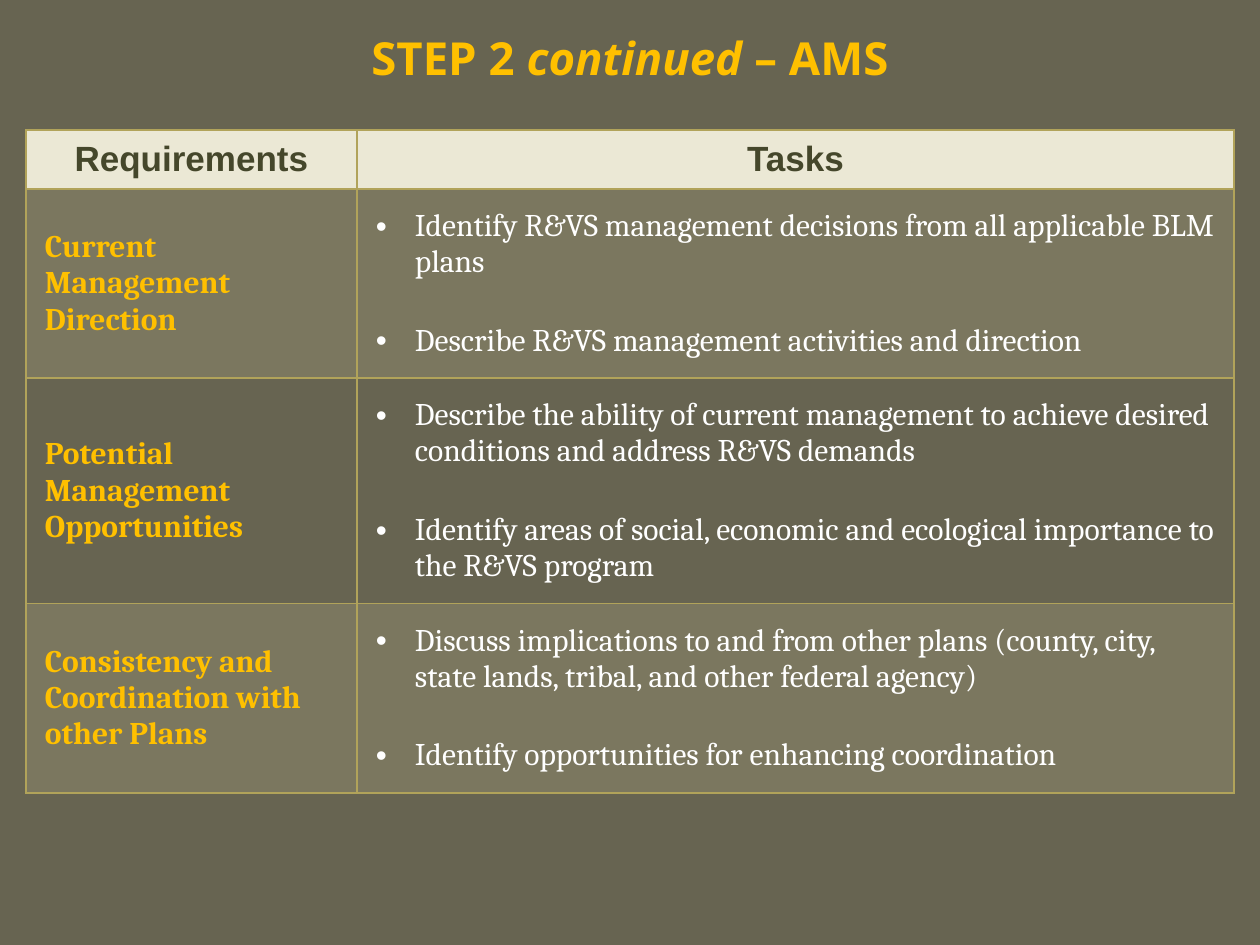
from dataclasses import dataclass

from lxml.etree import SubElement
from pptx import Presentation
from pptx.dml.color import RGBColor
from pptx.enum.text import MSO_ANCHOR, PP_ALIGN
from pptx.oxml import parse_xml
from pptx.oxml.ns import nsdecls, qn
from pptx.util import Pt

EMU_PER_PIXEL = 914400 / 126


@dataclass(frozen=True)
class Theme:
    background: str = "676451"
    accent: str = "FFC000"
    header_fill: str = "EBE8D5"
    header_text: str = "45472B"
    band: str = "CEC597"
    band_opacity: int = 20
    border: str = "B1A35A"
    body_text: str = "FFFFFF"
    title_font: str = "Open Sans"
    header_font: str = "Arial"
    body_font: str = "Cambria"
    title_size: int = 26
    header_size: int = 20
    body_size: int = 18


HEADINGS = ["Requirements", "Tasks"]
REQUIREMENTS = [
    ("Current Management Direction", [
        "Identify R&VS management decisions from all applicable BLM plans",
        "Describe R&VS management activities and direction",
    ]),
    ("Potential Management Opportunities", [
        "Describe the ability of current management to achieve desired "
        "conditions and address R&VS demands",
        "Identify areas of social, economic and ecological importance to "
        "the R&VS program",
    ]),
    ("Consistency and Coordination with other Plans", [
        "Discuss implications to and from other plans (county, city, "
        "state lands, tribal, and other federal agency)",
        "Identify opportunities for enhancing coordination",
    ]),
]
COLUMN_WIDTHS = [331, 877]
ROW_HEIGHTS = [59, 189, 225, 189]


def px(pixels):
    return round(pixels * EMU_PER_PIXEL)


def add_run(paragraph, text, *, font, size, color, bold=False, italic=False):
    run = paragraph.add_run()
    run.text = text
    run.font.name = font
    run.font.size = Pt(size)
    run.font.color.rgb = RGBColor.from_string(color)
    run.font.bold = bold
    run.font.italic = italic


def add_bullet(paragraph, indent):
    properties = paragraph._p.get_or_add_pPr()
    properties.set("marL", str(px(indent)))
    properties.set("indent", str(-px(indent)))
    SubElement(properties, qn("a:buFont")).set("typeface", "Arial")
    SubElement(properties, qn("a:buChar")).set("char", "•")


class SlideBuilder:
    def __init__(self, presentation, theme):
        self.theme = theme
        self.slide = presentation.slides.add_slide(presentation.slide_layouts[5])
        fill = self.slide.background.fill
        fill.solid()
        fill.fore_color.rgb = RGBColor.from_string(theme.background)

    def title(self, parts, left, top, width, height):
        """Fill the title from (text, italic) pairs."""
        title = self.slide.shapes.title
        title.left, title.top = px(left), px(top)
        title.width, title.height = px(width), px(height)
        title.text_frame.vertical_anchor = MSO_ANCHOR.MIDDLE
        paragraph = title.text_frame.paragraphs[0]
        paragraph.alignment = PP_ALIGN.CENTER
        for text, italic in parts:
            add_run(paragraph, text, font=self.theme.title_font,
                    size=self.theme.title_size, color=self.theme.accent,
                    bold=True, italic=italic)

    def table(self, left, top, column_widths, row_heights):
        table = self.slide.shapes.add_table(
            len(row_heights), len(column_widths), px(left), px(top),
            px(sum(column_widths)), px(sum(row_heights))).table
        for column, width in zip(table.columns, column_widths):
            column.width = px(width)
        for row, height in zip(table.rows, row_heights):
            row.height = px(height)
        for cell in table.iter_cells():
            cell.vertical_anchor = MSO_ANCHOR.MIDDLE
            self.borders(cell)
        return table

    def borders(self, cell):
        properties = cell._tc.get_or_add_tcPr()
        for position, side in enumerate(("lnL", "lnR", "lnT", "lnB")):
            properties.insert(position, parse_xml(
                f'<a:{side} {nsdecls("a")} w="12700"><a:solidFill>'
                f'<a:srgbClr val="{self.theme.border}"/>'
                f'</a:solidFill></a:{side}>'))

    def header_cell(self, cell, text):
        cell.fill.solid()
        cell.fill.fore_color.rgb = RGBColor.from_string(self.theme.header_fill)
        paragraph = cell.text_frame.paragraphs[0]
        paragraph.alignment = PP_ALIGN.CENTER
        add_run(paragraph, text, font=self.theme.header_font,
                size=self.theme.header_size, color=self.theme.header_text,
                bold=True)

    def body_cell(self, cell, texts, *, color, banded, bold=False, bulleted=False):
        cell.margin_left = cell.margin_right = px(19)
        cell.margin_top = cell.margin_bottom = px(19)
        if banded:
            self.band_fill(cell)
        else:
            cell.fill.background()
        frame = cell.text_frame
        for index, text in enumerate(texts):
            paragraph = frame.add_paragraph() if index else frame.paragraphs[0]
            if index:
                paragraph.space_before = Pt(24)
            if bulleted:
                add_bullet(paragraph, 39)
            add_run(paragraph, text, font=self.theme.body_font,
                    size=self.theme.body_size, color=color, bold=bold)

    def band_fill(self, cell):
        cell.fill.solid()
        cell.fill.fore_color.rgb = RGBColor.from_string(self.theme.band)
        color = cell._tc.tcPr.find(qn("a:solidFill")).find(qn("a:srgbClr"))
        SubElement(color, qn("a:alpha")).set(
            "val", str(self.theme.band_opacity * 1000))


def main():
    presentation = Presentation()
    presentation.slide_width, presentation.slide_height = px(1260), px(945)
    theme = Theme()
    builder = SlideBuilder(presentation, theme)
    builder.title([("STEP 2 ", False), ("continued ", True), ("– AMS", False)],
                  0, 10, 1260, 95)

    table = builder.table(26, 130, COLUMN_WIDTHS, ROW_HEIGHTS)
    for column, heading in enumerate(HEADINGS):
        builder.header_cell(table.cell(0, column), heading)
    for row, (requirement, tasks) in enumerate(REQUIREMENTS, start=1):
        banded = row % 2 == 1
        builder.body_cell(table.cell(row, 0), [requirement],
                          color=theme.accent, banded=banded, bold=True)
        builder.body_cell(table.cell(row, 1), tasks, color=theme.body_text,
                          banded=banded, bulleted=True)
    presentation.save("out.pptx")


if __name__ == "__main__":
    main()
